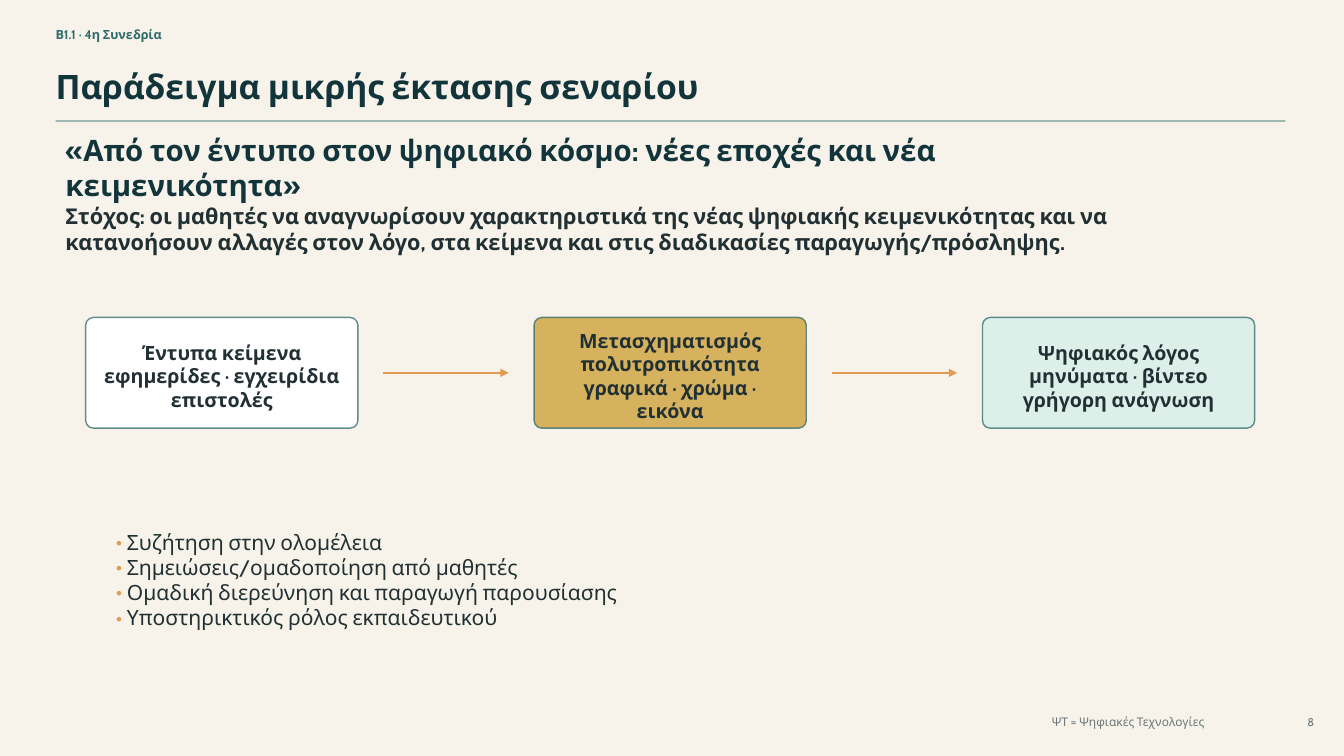
from dataclasses import dataclass

from lxml.etree import SubElement
from pptx import Presentation
from pptx.dml.color import RGBColor
from pptx.enum.shapes import MSO_CONNECTOR, MSO_SHAPE
from pptx.enum.text import MSO_ANCHOR, PP_ALIGN
from pptx.oxml.ns import qn
from pptx.util import Cm, Pt


@dataclass(frozen=True)
class Theme:
    """Colours, font and type sizes of the slide."""
    font: str = "Cabin"
    paper: str = "F7F3EA"
    teal: str = "2D6A6A"
    navy: str = "12343B"
    ink: str = "203033"
    grey: str = "6B7779"
    orange: str = "E39A53"
    gold: str = "D6B15E"
    mint: str = "DCEFE9"
    white: str = "FFFFFF"
    title: float = 24
    scenario: float = 21
    goal: float = 15.5
    bullets: float = 15
    card: float = 14
    tag: float = 9
    note: float = 8.5
    number: float = 8


def rgb(value):
    """Turn a hex string into a colour."""
    return RGBColor.from_string(value)


def write(tf, text, font, size, color, bold=False, align=PP_ALIGN.LEFT,
          bullet=None, margins=(0, 0, 0, 0)):
    """Fill a text frame, one paragraph for each line of text."""
    tf.word_wrap = True
    tf.vertical_anchor = MSO_ANCHOR.MIDDLE
    tf.margin_left, tf.margin_top, tf.margin_right, tf.margin_bottom = map(Cm, margins)
    for i, line in enumerate(text.split("\n")):
        p = tf.add_paragraph() if i else tf.paragraphs[0]
        p.alignment = align
        if bullet:
            pPr = p._p.get_or_add_pPr()
            pPr.set("marL", str(Cm(0.28)))
            pPr.set("indent", str(-Cm(0.28)))
            SubElement(SubElement(pPr, qn("a:buClr")), qn("a:srgbClr"), val=bullet)
            SubElement(pPr, qn("a:buFont"), typeface=font)
            SubElement(pPr, qn("a:buChar"), char="•")
        r = p.add_run()
        r.text = line
        r.font.name = font
        r.font.size = Pt(size)
        r.font.bold = bold
        r.font.color.rgb = rgb(color)


class Slide:
    """Draw elements on one slide in a given style; lengths are in cm."""

    def __init__(self, prs, theme):
        """Add a blank slide with the theme background."""
        self.theme = theme
        self.s = prs.slides.add_slide(prs.slide_layouts[6])
        fill = self.s.background.fill
        fill.solid()
        fill.fore_color.rgb = rgb(theme.paper)

    def text(self, x, y, w, h, text, **fmt):
        """Add a text box."""
        tb = self.s.shapes.add_textbox(Cm(x), Cm(y), Cm(w), Cm(h))
        write(tb.text_frame, text, self.theme.font, **fmt)

    def stroke(self, sp, color, opacity=100):
        """Set a thin outline and return its XML element."""
        sp.line.color.rgb = rgb(color)
        sp.line.width = Pt(1)
        ln = sp._element.spPr.find(qn("a:ln"))
        if opacity < 100:
            clr = ln.find(".//" + qn("a:srgbClr"))
            SubElement(clr, qn("a:alpha"), val=str(opacity * 1000))
        return ln

    def line(self, x, y, length, color, opacity=100, arrow=False):
        """Add a horizontal line or arrow."""
        cn = self.s.shapes.add_connector(
            MSO_CONNECTOR.STRAIGHT, Cm(x), Cm(y), Cm(x + length), Cm(y))
        ln = self.stroke(cn, color, opacity)
        if arrow:
            SubElement(ln, qn("a:tailEnd"), type="triangle")
        SubElement(cn._element.spPr, qn("a:effectLst"))

    def card(self, x, y, w, h, text, fill):
        """Add a rounded card with centred bold text."""
        sp = self.s.shapes.add_shape(
            MSO_SHAPE.ROUNDED_RECTANGLE, Cm(x), Cm(y), Cm(w), Cm(h))
        sp.adjustments[0] = 0.07
        sp.shadow.inherit = False
        sp.fill.solid()
        sp.fill.fore_color.rgb = rgb(fill)
        self.stroke(sp, self.theme.teal, 75)
        write(sp.text_frame, text, self.theme.font, self.theme.card, self.theme.ink,
              bold=True, align=PP_ALIGN.CENTER, margins=(0.3, 0.3, 0.3, 0.15))


def main():
    """Build the slide and save it."""
    t = Theme()
    prs = Presentation()
    prs.slide_width, prs.slide_height = Cm(33.87), Cm(19.05)
    s = Slide(prs, t)

    s.text(1.4, 0.56, 9.14, 0.64, "Β1.1 · 4η Συνεδρία",
           size=t.tag, color=t.teal, bold=True)
    s.text(1.4, 1.47, 22.61, 1.4, "Παράδειγμα μικρής έκτασης σεναρίου",
           size=t.title, color=t.navy, bold=True)
    s.line(1.4, 3.05, 30.99, t.teal, opacity=65)
    s.text(1.65, 3.68, 25.15, 1.07,
           "«Από τον έντυπο στον ψηφιακό κόσμο: νέες εποχές και νέα κειμενικότητα»",
           size=t.scenario, color=t.navy, bold=True)
    s.text(1.65, 4.95, 29.72, 1.65,
           "Στόχος: οι μαθητές να αναγνωρίσουν χαρακτηριστικά της νέας ψηφιακής "
           "κειμενικότητας και να κατανοήσουν αλλαγές στον λόγο, στα κείμενα και "
           "στις διαδικασίες παραγωγής/πρόσληψης.",
           size=t.goal, color=t.ink, bold=True)

    cards = [
        ("Έντυπα κείμενα\nεφημερίδες · εγχειρίδια\nεπιστολές", t.white),
        ("Μετασχηματισμός\nπολυτροπικότητα\nγραφικά · χρώμα · εικόνα", t.gold),
        ("Ψηφιακός λόγος\nμηνύματα · βίντεο\nγρήγορη ανάγνωση", t.mint),
    ]
    left, top, w, h, pitch, gap = 2.16, 8, 6.86, 2.79, 11.3, 0.64
    for i, (text, fill) in enumerate(cards):
        x = left + i * pitch
        s.card(x, top, w, h, text, fill)
        if i < len(cards) - 1:
            s.line(x + w + gap, top + h / 2, pitch - w - 2 * gap, t.orange, arrow=True)

    s.text(2.92, 13.34, 27.69, 2.54,
           "Συζήτηση στην ολομέλεια\n"
           "Σημειώσεις/ομαδοποίηση από μαθητές\n"
           "Ομαδική διερεύνηση και παραγωγή παρουσίασης\n"
           "Υποστηρικτικός ρόλος εκπαιδευτικού",
           size=t.bullets, color=t.ink, bullet=t.orange)
    s.text(21.84, 17.91, 8.51, 0.56, "ΨΤ = Ψηφιακές Τεχνολογίες",
           size=t.note, color=t.grey, align=PP_ALIGN.RIGHT)
    s.text(32.56, 17.93, 0.56, 0.51, "8",
           size=t.number, color=t.grey, align=PP_ALIGN.RIGHT)
    prs.save("out.pptx")


if __name__ == "__main__":
    main()
